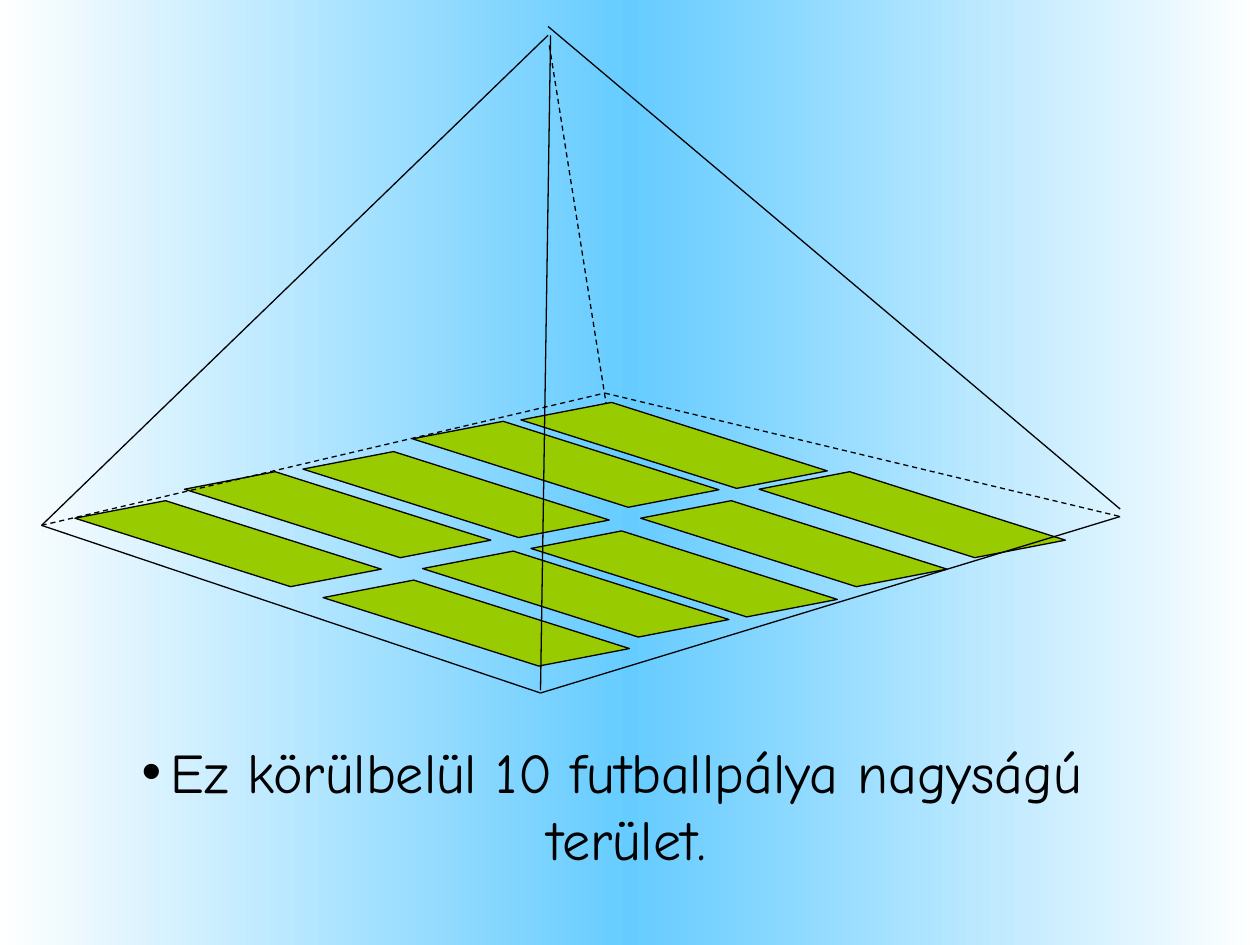
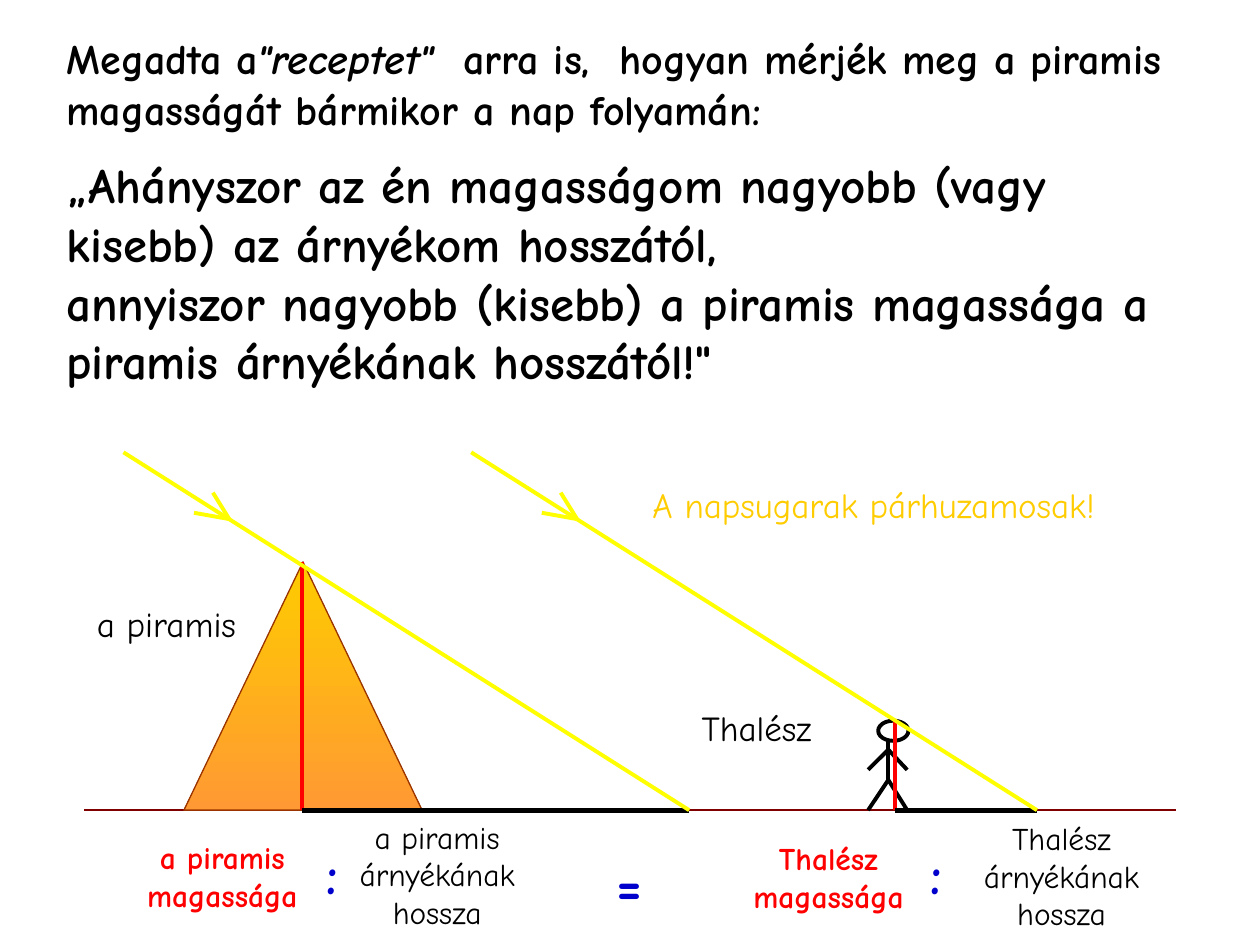
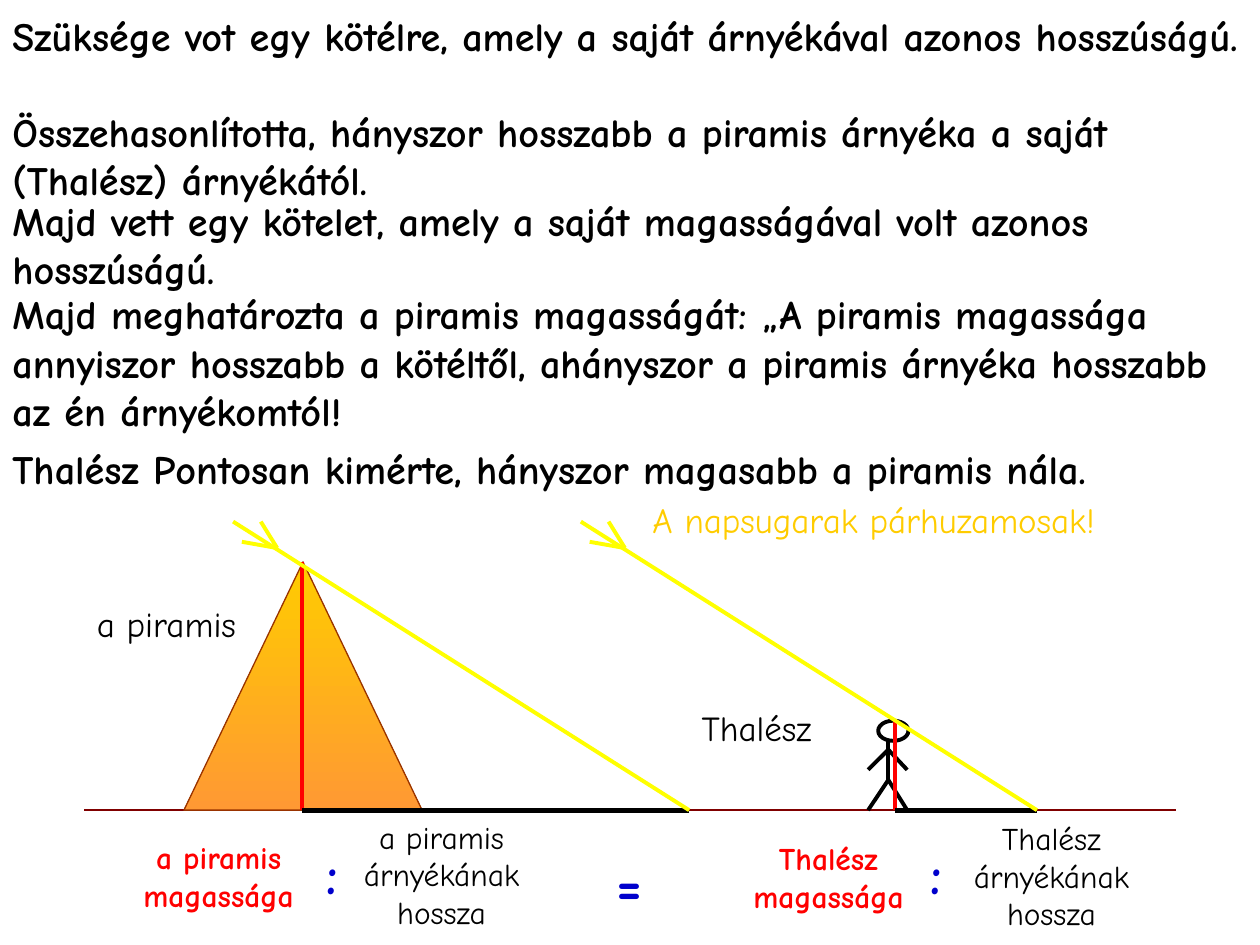
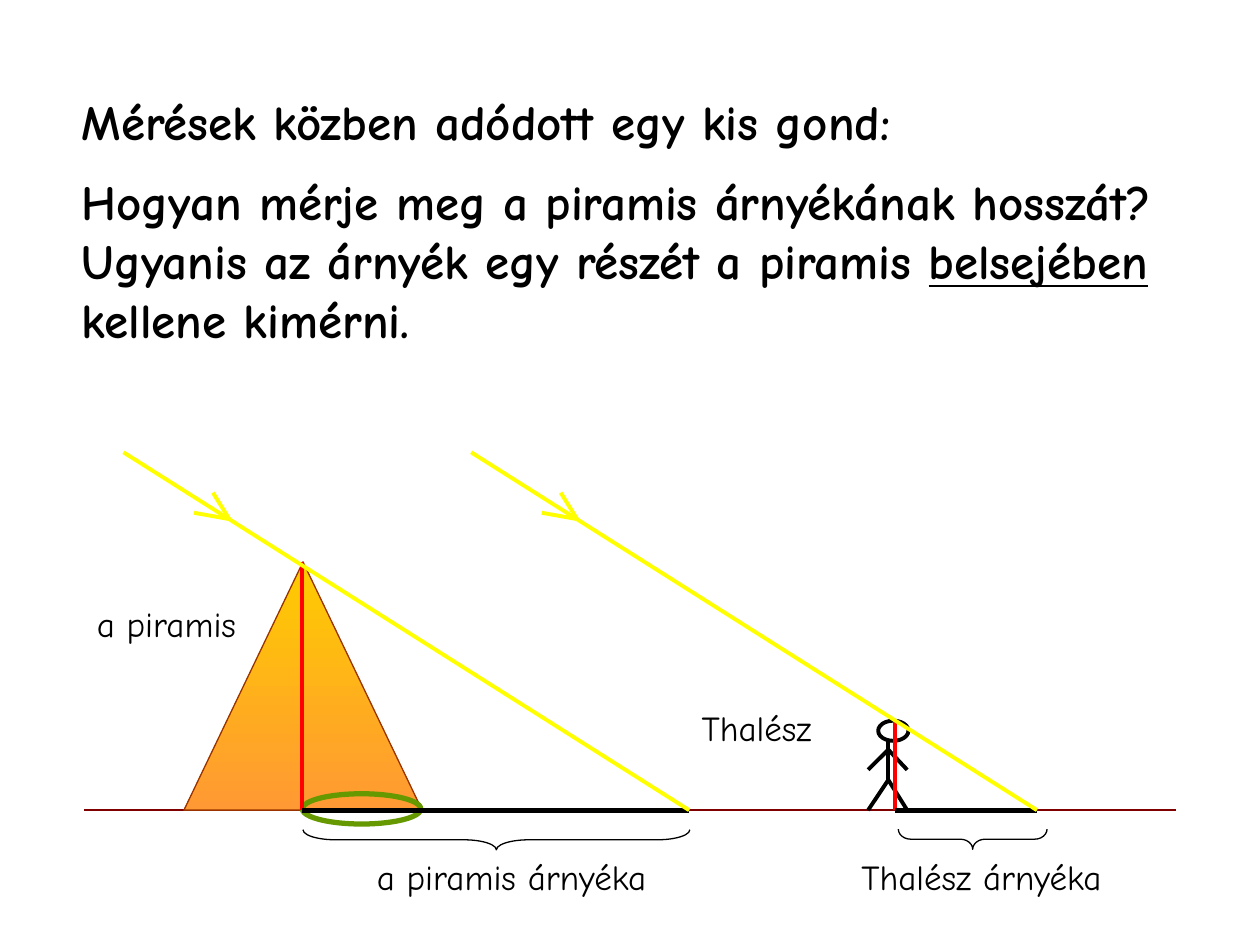
import pptx
import pptx.util
import pptx.dml.color
import pptx.enum.dml
import pptx.enum.shapes
import pptx.enum.text
import pptx.oxml
import pptx.oxml.ns
import copy

Inches, Pt = pptx.util.Inches, pptx.util.Pt
rgb = pptx.dml.color.RGBColor.from_string
qn = pptx.oxml.ns.qn
MSO = pptx.enum.shapes.MSO_SHAPE
ALIGN = pptx.enum.text.PP_ALIGN
FIT = pptx.enum.text.MSO_AUTO_SIZE.SHAPE_TO_FIT_TEXT

# Shared style
FONT = "Comic Neue"
BLACK, RED, BLUE, YELLOW = "000000", "FF0000", "0000CC", "FFFF00"
GROUND = 6.43
RAY_GAP = 2.76


def line(shapes, x1, y1, x2, y2, color=BLACK, width=0.75, dashed=False):
    c = shapes.add_connector(pptx.enum.shapes.MSO_CONNECTOR.STRAIGHT,
                             Inches(x1), Inches(y1), Inches(x2), Inches(y2))
    c.line.color.rgb = rgb(color)
    c.line.width = Pt(width)
    if dashed:
        c.line.dash_style = pptx.enum.dml.MSO_LINE.DASH
    c._element.spPr.append(pptx.oxml.parse_xml(
        '<a:effectLst xmlns:a="http://schemas.openxmlformats.org/drawingml/2006/main"/>'))


def text(s, box, paragraphs, size, color=BLACK, bold=False, align=ALIGN.LEFT):
    """Add a text box; each paragraph is a list of run texts."""
    tf = s.shapes.add_textbox(*map(Inches, box)).text_frame
    tf.word_wrap = True
    tf.auto_size = FIT
    for i, runs in enumerate(paragraphs):
        p = tf.add_paragraph() if i else tf.paragraphs[0]
        p.alignment = align
        p.font.name, p.font.size, p.font.bold = FONT, Pt(size), bold
        p.font.color.rgb = rgb(color)
        for run in runs:
            p.add_run().text = run
    return tf


prs = pptx.Presentation()
prs.slide_width, prs.slide_height = Inches(10), Inches(7.5)

# Slide 1: gradient background
s = prs.slides.add_slide(prs.slide_layouts[1])
fill = s.background.fill
fill.gradient()
fill.gradient_angle = 0
stops = s._element.find(".//" + qn("a:gsLst"))
stops.append(copy.deepcopy(stops[0]))
for stop, (position, color) in zip(fill.gradient_stops,
                                   [(0, "FFFFFF"), (0.5, "66CCFF"), (1, "FFFFFF")]):
    stop.position = position
    stop.color.rgb = rgb(color)

# Slide 1: bullet
title, body = s.shapes.title, s.placeholders[1]
title._element.getparent().remove(title._element)
body.left, body.top, body.width, body.height = map(Inches, (0.35, 5.8, 9.02, 1.18))
tf = body.text_frame
tf.auto_size = FIT
p = tf.paragraphs[0]
p.add_run().text = "Ez körülbelül 10 futballpálya nagyságú terület."
p.alignment = ALIGN.CENTER
p.font.name, p.font.size = FONT, Pt(32)
p.font.color.rgb = rgb(BLACK)
pPr = p._p.get_or_add_pPr()
pPr.set("marL", str(Inches(0.23)))
pPr.set("indent", str(-Inches(0.23)))

# Slide 1: football pitches in two rows
back_row = [(0.59, 4.14), (1.46, 3.91), (2.4, 3.75), (3.27, 3.51), (4.13, 3.36)]
front_row = [(2.56, 4.77), (3.35, 4.54), (4.21, 4.38), (5.08, 4.14), (6.02, 3.91)]
for x, y in back_row + front_row:
    pitch = s.shapes.add_shape(MSO.PARALLELOGRAM, Inches(x), Inches(y), Inches(2.44), Inches(0.35))
    pitch.adjustments[0] = 1.84
    pitch.rotation = 17.6
    pitch.shadow.inherit = False
    pitch.fill.solid()
    pitch.fill.fore_color.rgb = rgb("99CC00")
    pitch.line.color.rgb = rgb(BLACK)
    pitch.line.width = Pt(0.75)

# Slide 1: pyramid edges, hidden ones dashed
edges = s.shapes.add_group_shape().shapes
for x1, y1, x2, y2, hidden in [
        (0.33, 4.17, 4.29, 5.5, False), (4.29, 5.5, 8.89, 4.1, False),
        (8.89, 4.04, 4.35, 0.21, False), (4.35, 0.28, 0.33, 4.17, False),
        (0.33, 4.17, 4.8, 3.12, True), (4.8, 3.12, 8.89, 4.1, True),
        (4.36, 0.36, 4.81, 3.2, True), (4.37, 0.28, 4.29, 5.48, False)]:
    line(edges, x1, y1, x2, y2, dashed=hidden)

# Slides 2-4: the shadow diagram, with ray start and arrow tip per slide
high_ray, low_ray = ((0.98, 3.59), (1.82, 4.12)), ((1.85, 4.14), (2.2, 4.35))
scenes = []
for number, (start, tip) in [(2, high_ray), (3, low_ray), (4, high_ray)]:
    s = prs.slides.add_slide(prs.slide_layouts[6])
    scenes.append(s)
    line(s.shapes, 0.67, GROUND, 9.33, GROUND, "800000", 1)

    # Pyramid
    pyramid = s.shapes.add_shape(MSO.ISOSCELES_TRIANGLE, Inches(1.46), Inches(4.46),
                                 Inches(1.89), Inches(1.97))
    pyramid.shadow.inherit = False
    pyramid.fill.gradient()
    pyramid.fill.gradient_angle = 270
    for stop, color in zip(pyramid.fill.gradient_stops, ("FFCC00", "FF9933")):
        stop.color.rgb = rgb(color)
    pyramid.line.color.rgb = rgb("993300")
    pyramid.line.width = Pt(0.75)

    # Thales
    figure = s.shapes.add_group_shape().shapes
    for x1, y1, x2, y2 in [(7.05, 5.88, 7.05, 6.19),
                           (7.05, 6.19, 6.89, GROUND), (7.05, 6.19, 7.2, GROUND),
                           (7.05, 5.95, 6.89, 6.11), (7.05, 5.95, 7.2, 6.11)]:
        line(figure, x1, y1, x2, y2, width=2.25)

    # Outlines: head, and on slide 4 the inner shadow mark and the braces
    outlines = [(figure, MSO.OVAL, (6.97, 5.72, 0.24, 0.16), None, BLACK, 2.25)]
    if number == 4:
        outlines += [(s.shapes, MSO.OVAL, (2.4, 6.3, 0.94, 0.24), None, "669900", 3),
                     (s.shapes, MSO.LEFT_BRACE, (7.64, 6.07, 0.16, 1.18), 0.62, BLACK, 0.75),
                     (s.shapes, MSO.LEFT_BRACE, (3.86, 5.13, 0.16, 3.07), 1.62, BLACK, 0.75)]
    for shapes, kind, box, curve, color, width in outlines:
        sp = shapes.add_shape(kind, *map(Inches, box))
        sp.shadow.inherit = False
        sp.fill.background()
        sp.line.color.rgb = rgb(color)
        sp.line.width = Pt(width)
        if curve:
            sp.adjustments[0] = curve
            sp.rotation = 270

    # Heights, shadows and sun rays
    for x, top, shadow_end in [(2.4, 4.46, 5.47), (7.1, 5.72, 8.23)]:
        line(s.shapes, x, top, x, GROUND, RED, 2.25)
        line(s.shapes, shadow_end, GROUND, x, GROUND, BLACK, 3)
    for dx in (0, RAY_GAP):
        line(s.shapes, start[0] + dx, start[1], 5.47 + dx, GROUND, YELLOW, 2.25)
        arrow = s.shapes.add_group_shape().shapes
        for wing_x, wing_y in [(0.28, 0.05), (0.13, 0.21)]:
            line(arrow, tip[0] + dx - wing_x, tip[1] - wing_y, tip[0] + dx, tip[1], YELLOW, 2.25)

    # Names
    text(s, (0.67, 4.73, 1.46, 0.43), [["a piramis"]], 20)
    text(s, (5.47, 5.56, 1.34, 0.44), [["Thalész"]], 20)

recipe, ropes, problem = scenes

# Slides 2 and 3: sun ray note and the proportion under the diagram
for s, note_y, thales_w, shadow_w, height_x, height_w in [
        (recipe, 3.79, 1.81, 1.66, 0.98, 1.57), (ropes, 3.91, 1.65, 1.73, 0.91, 1.65)]:
    text(s, (5.08, note_y, 4.45, 0.43), [["A napsugarak párhuzamosak!"]], 20, "FFCC00")
    for box, label, size, color, bold in [
            ((height_x, 6.6, height_w, 0.71), "a piramis magassága", 18, RED, True),
            ((2.4, 6.61, 0.47, 0.63), ":", 32, BLUE, True),
            ((2.64, 6.44, shadow_w, 1), "a piramis árnyékának hossza", 18, BLACK, False),
            ((4.76, 6.69, 0.47, 0.63), "=", 32, BLUE, True),
            ((5.79, 6.61, 1.57, 0.71), "Thalész magassága", 18, RED, True),
            ((7.2, 6.61, 0.47, 0.63), ":", 32, BLUE, True),
            ((7.52, 6.45, thales_w, 1), "Thalész árnyékának hossza", 18, BLACK, False)]:
        text(s, box, [[label]], size, color, bold, ALIGN.CENTER)

# Slide 2: the recipe
tf = text(recipe, (0.43, 0.21, 9.1, 2.96), [
    ["Megadta a", "\"receptet\"  ",
     "arra is,  hogyan mérjék meg a piramis magasságát bármikor a nap folyamán:"],
    ["„Ahányszor az én magasságom nagyobb (vagy kisebb) az árnyékom hosszától,"],
    ["annyiszor nagyobb (kisebb) a piramis magassága a piramis árnyékának hosszától!\""],
], 28, bold=True)
tf.paragraphs[0].font.size = Pt(24)
tf.paragraphs[0].runs[1].font.italic = True
tf.paragraphs[1].space_before = Pt(12)

# Slide 3: the steps
for y, width, height, step in [
        (0.04, 10, 0.88, "Szüksége vot egy kötélre, amely a saját árnyékával azonos hosszúságú."),
        (0.8, 9.88, 0.91, "Összehasonlította, hányszor hosszabb a piramis árnyéka a saját "
                          "(Thalész) árnyékától."),
        (1.51, 10.04, 0.88, "Majd vett egy kötelet, amely a saját magasságával volt azonos "
                            "hosszúságú."),
        (2.25, 10.04, 1.26, "Majd meghatározta a piramis magasságát: „A piramis magassága "
                            "annyiszor hosszabb a kötéltől, ahányszor a piramis árnyéka "
                            "hosszabb az én árnyékomtól!"),
        (3.48, 9.88, 0.49, "Thalész Pontosan kimérte, hányszor magasabb a piramis nála.")]:
    text(ropes, (0, y, width, height), [[step]], 23, bold=True)

# Slide 4: the problem and the shadow names
tf = text(problem, (0.55, 0.68, 9.1, 2.15), [
    ["Mérések közben adódott egy kis gond:"],
    ["Hogyan mérje meg a piramis árnyékának hosszát? Ugyanis az árnyék egy részét a piramis ",
     "belsejében", " kellene kimérni."],
], 28, bold=True)
tf.paragraphs[1].space_before = Pt(12)
tf.paragraphs[1].runs[1].font.underline = True
for box, label in [((2.64, 6.74, 2.84, 0.44), "a piramis árnyéka"),
                   ((6.57, 6.74, 2.44, 0.44), "Thalész árnyéka")]:
    text(problem, box, [[label]], 20, align=ALIGN.CENTER)

prs.save("out.pptx")
